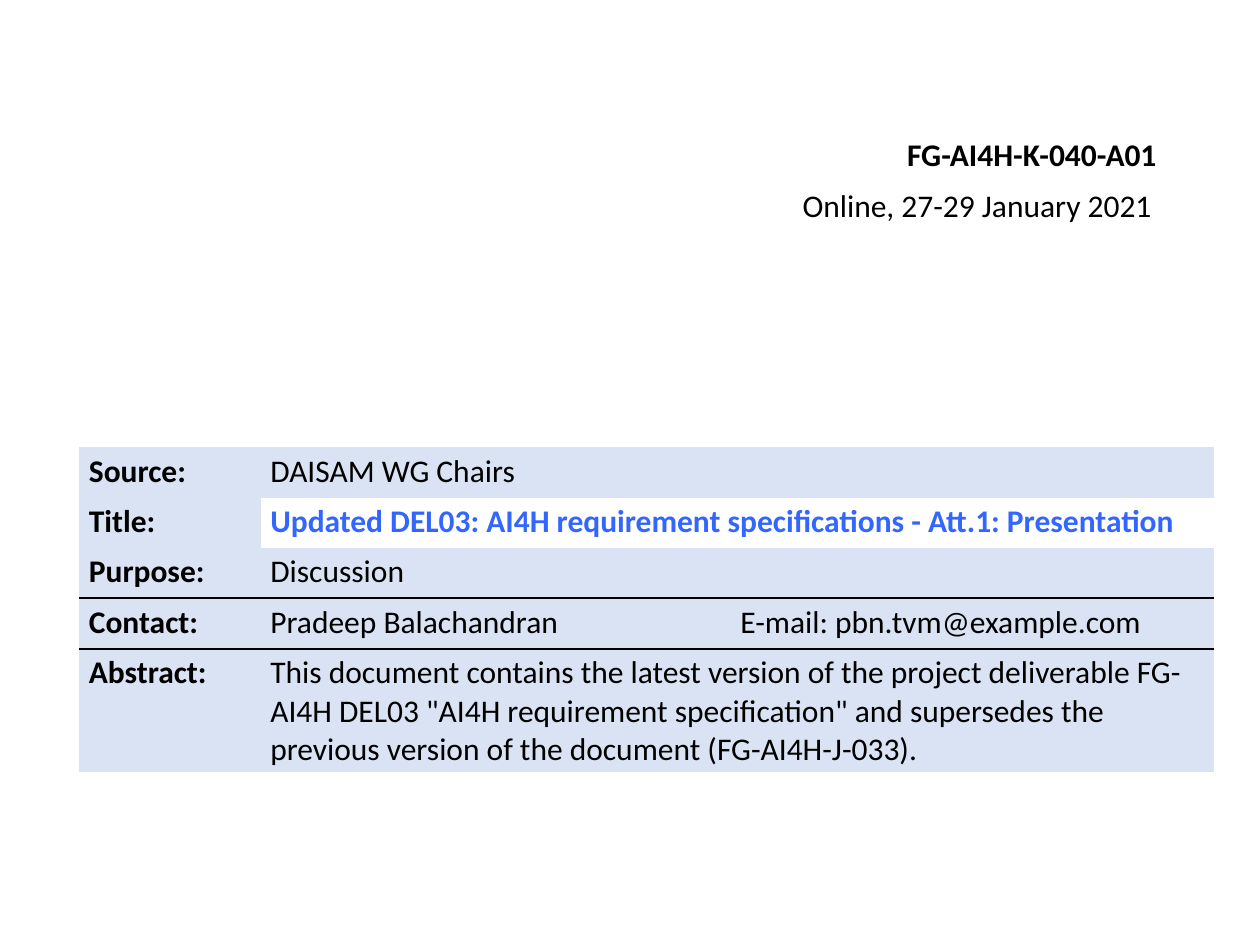
"""Build the cover slide of a meeting document."""
from lxml import etree
from pptx import Presentation
from pptx import util as u
from pptx.dml.color import RGBColor
from pptx.enum import text
from pptx.oxml import ns

BLACK = RGBColor(0x00, 0x00, 0x00)
TITLE_BLUE = RGBColor(0x33, 0x66, 0xFF)
PALE_BLUE = RGBColor(0xDA, 0xE3, 0xF3)

REGULAR = {"name": "Calibri", "size": u.Pt(18), "bold": False}
BOLD = {**REGULAR, "bold": True}
CELL_FORMAT = {
    "margin_left": u.Pt(5.4),
    "margin_right": u.Pt(5.2),
    "margin_top": u.Pt(2.9),
    "margin_bottom": u.Pt(2.9),
    "vertical_anchor": text.MSO_ANCHOR.TOP,
}
TABLE_FORMAT = {"first_row": False, "horz_banding": False}

COLUMN_WIDTHS = (103.7, 268.6, 276.3)
ROW_HEIGHTS = (28.8, 28.8, 28.8, 28.8, 70.4)
RULED_ROWS = (2, 3)
DETAILS = (
    ("Source:", "DAISAM WG Chairs"),
    ("Title:", "Updated DEL03: AI4H requirement specifications - Att.1: Presentation"),
    ("Purpose:", "Discussion"),
    ("Contact:", "Pradeep Balachandran", "E-mail: pbn.tvm@example.com"),
    ("Abstract:", "This document contains the latest version of the project deliverable "
     "FG-AI4H DEL03 \"AI4H requirement specification\" and supersedes the "
     "previous version of the document (FG-AI4H-J-033)."),
)


def apply_format(target, values):
    for name, value in values.items():
        setattr(target, name, value)


def write(paragraph, wording, font_format, color=BLACK):
    run = paragraph.add_run()
    run.text = wording
    apply_format(run.font, font_format)
    run.font.color.rgb = color


def add_heading(slide, wording, box, font_format):
    shape = slide.shapes.add_textbox(*map(u.Pt, box))
    shape.text_frame.word_wrap = False
    paragraph = shape.text_frame.paragraphs[0]
    paragraph.alignment = text.PP_ALIGN.RIGHT
    write(paragraph, wording, font_format)


def set_borders(cell, ruled_sides):
    properties = cell._tc.get_or_add_tcPr()
    for side in "LRTB":
        line = etree.SubElement(properties, ns.qn(f"a:ln{side}"), w=str(u.Pt(1.5)))
        if side in ruled_sides:
            fill = etree.SubElement(line, ns.qn("a:solidFill"))
            etree.SubElement(fill, ns.qn("a:srgbClr"), val=str(BLACK))
        else:
            etree.SubElement(line, ns.qn("a:noFill"))


def format_cell(cell, row, filled):
    apply_format(cell, CELL_FORMAT)
    top = "T" if row - 1 in RULED_ROWS else ""
    bottom = "B" if row in RULED_ROWS else ""
    set_borders(cell, top + bottom)
    if filled:
        cell.fill.solid()
        cell.fill.fore_color.rgb = PALE_BLUE
    else:
        cell.fill.background()


def add_details_table(slide, left, top):
    size = (sum(COLUMN_WIDTHS), sum(ROW_HEIGHTS))
    frame = slide.shapes.add_table(
        len(ROW_HEIGHTS), len(COLUMN_WIDTHS), *map(u.Pt, (left, top, *size)))
    table = frame.table
    apply_format(table, TABLE_FORMAT)
    for column, width in zip(table.columns, COLUMN_WIDTHS):
        column.width = u.Pt(width)
    for index, (row, height, wordings) in enumerate(zip(table.rows, ROW_HEIGHTS, DETAILS)):
        row.height = u.Pt(height)
        is_title = wordings[0] == "Title:"
        for position, cell in enumerate(row.cells):
            format_cell(cell, index, position == 0 or not is_title)
        if len(wordings) == 2:
            table.cell(index, 1).merge(table.cell(index, 2))
        for position, wording in enumerate(wordings):
            font_format = BOLD if position == 0 or is_title else REGULAR
            color = TITLE_BLUE if position and is_title else BLACK
            paragraph = table.cell(index, position).text_frame.paragraphs[0]
            write(paragraph, wording, font_format, color)


def main():
    presentation = Presentation()
    apply_format(presentation, {"slide_width": u.Pt(720), "slide_height": u.Pt(540)})
    slide = presentation.slides.add_slide(presentation.slide_layouts[6])
    add_heading(slide, "FG-AI4H-K-040-A01", (508.3, 73.4, 159.8, 29), BOLD)
    add_heading(slide, "Online, 27-29 January 2021", (448.6, 103, 216.7, 29), REGULAR)
    add_details_table(slide, 45.4, 255.5)
    presentation.save("out.pptx")


if __name__ == "__main__":
    main()
